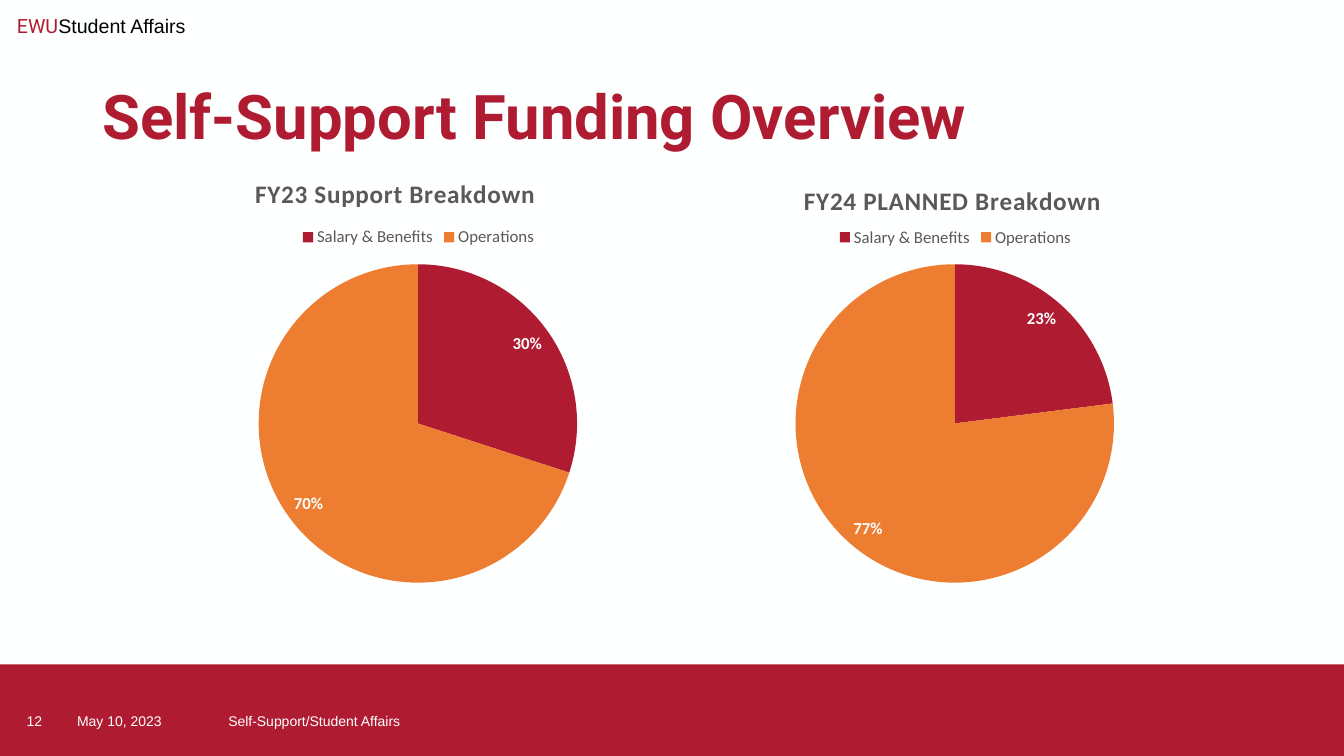
import pptx
import pptx.chart.data
import pptx.dml.color
import pptx.enum.chart
import pptx.enum.shapes
import pptx.enum.text
import pptx.oxml
import pptx.oxml.ns
import pptx.util

Pt = pptx.util.Pt
RED, ORANGE, WHITE, GRAY, BLACK = "AF1C32", "ED7D31", "FEFFFF", "595959", "000000"

TITLE = "Self-Support Funding Overview"
HEADER = [("EWU", "Roboto", RED), ("Student Affairs", "Arial", BLACK)]
FOOTERS = [  # text, left, width
    ("12", 12, 36),
    ("May 10, 2023", 48, 107),
    ("Self-Support/Student Affairs", 156, 324),
]
CATEGORIES = {"Salary & Benefits": RED, "Operations": ORANGE}
CHARTS = [  # title, values, frame (left, top, width, height), title left and top
    ("FY23 Support Breakdown", (30, 70), (136, 113, 325, 313), (179, 123)),
    ("FY24 PLANNED Breakdown", (23, 77), (530.5, 113.5, 303, 313), (571, 127.5)),
]
PIE_TOP, PIE_SIZE = 188.8, 227.5
LEGEND_TOP, LEGEND_WIDTH = 159.5, 172


def color(value):
    return pptx.dml.color.RGBColor.from_string(value)


def paint(fill, value):
    fill.solid()
    fill.fore_color.rgb = color(value)


def style(font, name, size, value, bold=False):
    font.name, font.size, font.bold = name, Pt(size), bold
    font.color.rgb = color(value)


def add_run(paragraph, text, *font_style):
    run = paragraph.add_run()
    run.text = text
    style(run.font, *font_style)
    return run


def add_text(slide, box, runs, size, anchor, wrap=True):
    shape = slide.shapes.add_textbox(*map(Pt, box))
    frame = shape.text_frame
    frame.word_wrap, frame.vertical_anchor = wrap, anchor
    for text, font, value in runs:
        add_run(frame.paragraphs[0], text, font, size, value)


def set_layout(element, frame, left, top, size=None):
    """Place a chart part at slide coordinates, as fractions of the chart frame."""
    values = {"x": (left - frame[0]) / frame[2], "y": (top - frame[1]) / frame[3]}
    if size:
        values.update(w=size / frame[2], h=size / frame[3])
    parts = ['<c:layoutTarget val="inner"/>'] if size else []
    parts += [f'<c:{key}Mode val="edge"/>' for key in ("x", "y")]
    parts += [f'<c:{key} val="{value:.4f}"/>' for key, value in values.items()]
    layout = pptx.oxml.parse_xml(
        f'<c:layout {pptx.oxml.ns.nsdecls("c")}><c:manualLayout>'
        f'{"".join(parts)}</c:manualLayout></c:layout>')
    for old in element.findall(pptx.oxml.ns.qn("c:layout")):
        element.remove(old)
    overlay = element.find(pptx.oxml.ns.qn("c:overlay"))
    if overlay is None:
        element.insert(0, layout)
    else:
        overlay.addprevious(layout)


def add_pie(slide, title, values, frame, title_position):
    data = pptx.chart.data.CategoryChartData()
    data.categories = list(CATEGORIES)
    data.add_series("Series 1", values)
    chart = slide.shapes.add_chart(
        pptx.enum.chart.XL_CHART_TYPE.PIE, *map(Pt, frame), data).chart
    style(chart.font, "Calibri", 10, BLACK)

    chart.has_title = True
    paragraph = chart.chart_title.text_frame.paragraphs[0]
    run = add_run(paragraph, title, "Calibri", 18, GRAY, True)
    run.font._element.set("spc", "50")

    chart.has_legend = True
    chart.legend.position = pptx.enum.chart.XL_LEGEND_POSITION.TOP
    chart.legend.include_in_layout = False
    style(chart.legend.font, "Calibri", 12, GRAY)

    plot = chart.plots[0]
    plot.vary_by_categories = True
    for index, value in enumerate(CATEGORIES.values()):
        paint(plot.series[0].points[index].format.fill, value)
    plot.has_data_labels = True
    labels = plot.data_labels
    labels.show_percentage, labels.show_value = True, False
    labels.number_format, labels.number_format_is_linked = "0%", False
    labels.position = pptx.enum.chart.XL_LABEL_POSITION.INSIDE_END
    style(labels.font, "Calibri", 12, WHITE, True)

    center = frame[0] + frame[2] / 2
    set_layout(chart.chart_title._element, frame, *title_position)
    set_layout(chart.legend._element, frame, center - LEGEND_WIDTH / 2, LEGEND_TOP)
    plot_area = chart._chartSpace.chart.plotArea
    set_layout(plot_area, frame, center - PIE_SIZE / 2, PIE_TOP, PIE_SIZE)


def main():
    presentation = pptx.Presentation()
    presentation.slide_width, presentation.slide_height = Pt(960), Pt(540)
    slide = presentation.slides.add_slide(presentation.slide_layouts[5])
    paint(slide.background.fill, WHITE)
    anchors = pptx.enum.text.MSO_ANCHOR

    band = slide.shapes.add_shape(
        pptx.enum.shapes.MSO_SHAPE.RECTANGLE, Pt(0), Pt(474.5), Pt(960), Pt(65.5))
    band.shadow.inherit = False
    paint(band.fill, RED)
    band.line.fill.background()

    add_text(slide, (5, 6.5, 140, 24.5), HEADER, 14, anchors.TOP, wrap=False)

    title = slide.shapes.title
    title.left, title.top, title.width, title.height = map(Pt, (66, 37.5, 828, 96))
    title.text_frame.vertical_anchor = anchors.MIDDLE
    paragraph = title.text_frame.paragraphs[0]
    paragraph.alignment = pptx.enum.text.PP_ALIGN.LEFT
    paragraph.line_spacing = 0.9
    add_run(paragraph, TITLE, "Roboto", 44, RED, True)

    for text, left, width in FOOTERS:
        add_text(slide, (left, 500.5, width, 29), [(text, "Arial", WHITE)], 10, anchors.MIDDLE)
    for chart in CHARTS:
        add_pie(slide, *chart)

    presentation.save("out.pptx")


if __name__ == "__main__":
    main()
